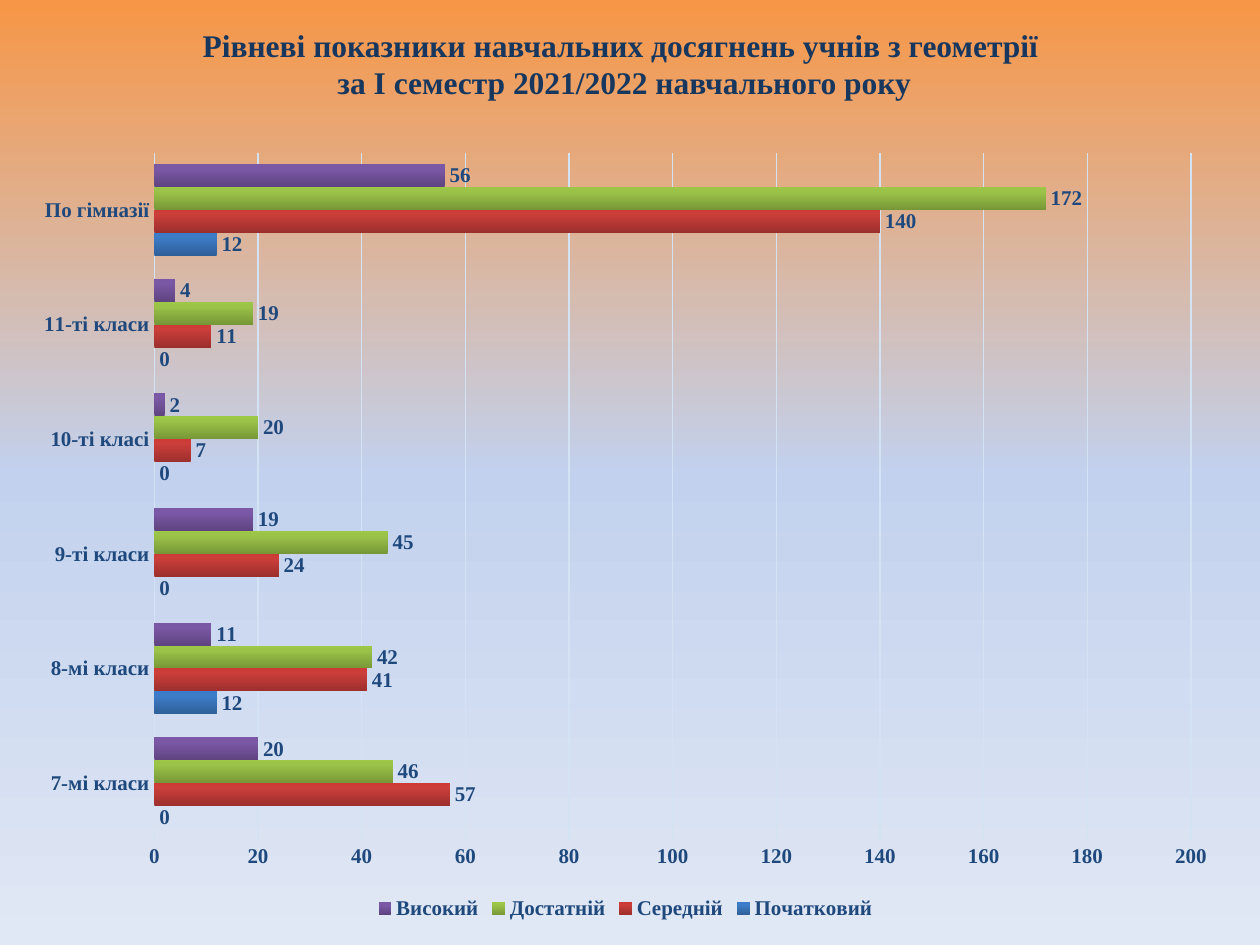
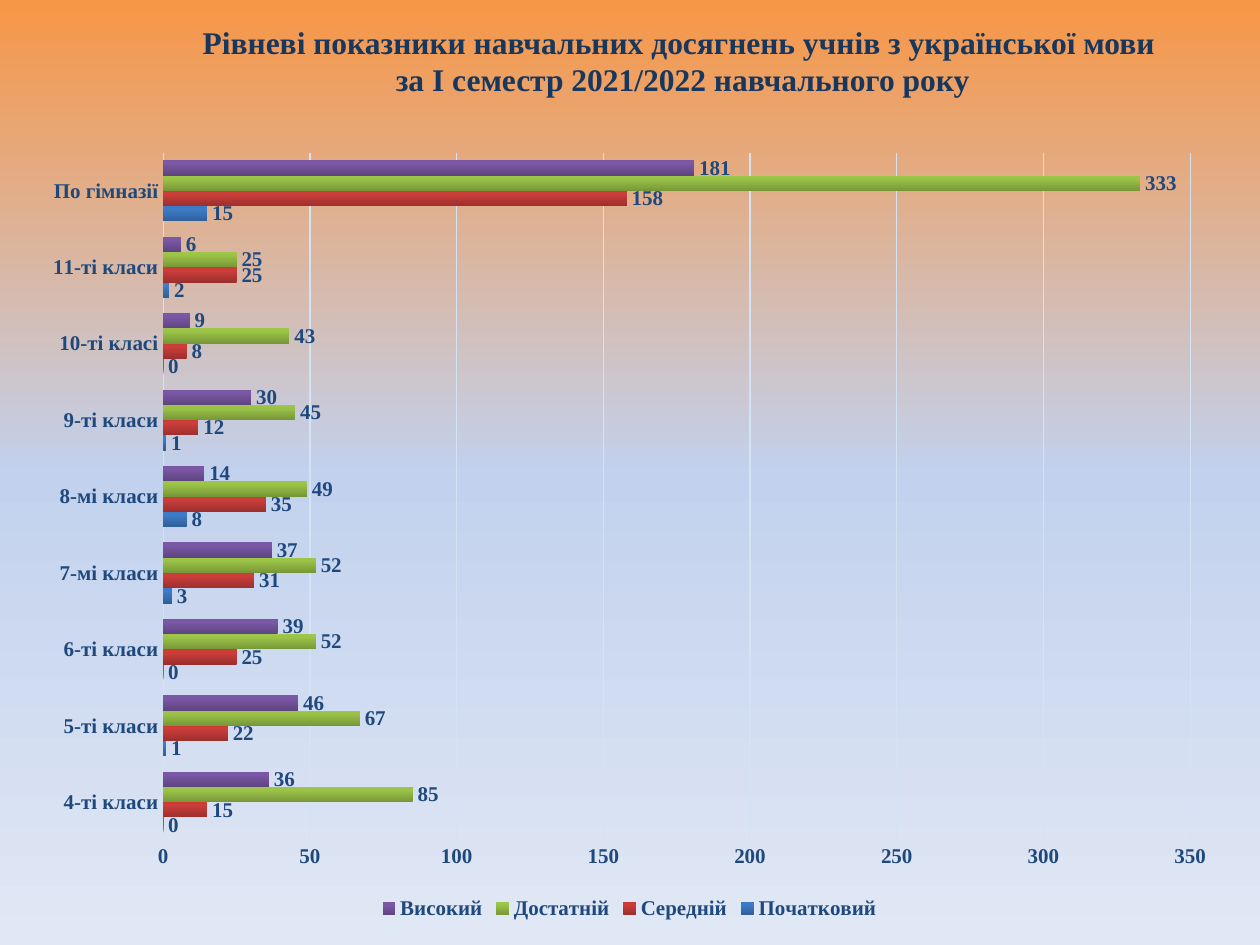
from copy import deepcopy
from dataclasses import dataclass

from pptx import Presentation
from pptx.chart.data import CategoryChartData
from pptx.dml.color import RGBColor
from pptx.dml.fill import FillFormat
from pptx.enum.chart import XL_CHART_TYPE, XL_LABEL_POSITION, XL_LEGEND_POSITION, XL_TICK_MARK
from pptx.enum.text import MSO_ANCHOR, MSO_AUTO_SIZE, PP_ALIGN
from pptx.oxml.ns import qn
from pptx.util import Emu, Pt

BARS = XL_CHART_TYPE.BAR_CLUSTERED
OUTSIDE = XL_LABEL_POSITION.OUTSIDE_END
BOTTOM = XL_LEGEND_POSITION.BOTTOM
NO_TICK = XL_TICK_MARK.NONE
MIDDLE = MSO_ANCHOR.MIDDLE
NO_AUTOFIT = MSO_AUTO_SIZE.NONE
CENTER = PP_ALIGN.CENTER

EMU_PER_PX = 914400 / 126
SLIDE_WIDTH, SLIDE_HEIGHT = 1260, 945
TITLE_ONLY = 5

# Shared colours and font
TITLE_COLOR = RGBColor(0x17, 0x37, 0x5E)
CHART_TEXT = RGBColor(0x1F, 0x49, 0x7D)
GRID = RGBColor(0xD4, 0xE3, 0xF4)
SKY = (
    (0.0, RGBColor(0xF7, 0x96, 0x46)),
    (0.5, RGBColor(0xC2, 0xD1, 0xED)),
    (1.0, RGBColor(0xE1, 0xE8, 0xF5)),
)
FONT = "Times New Roman"


@dataclass(frozen=True)
class Level:
    name: str
    dark: RGBColor
    middle: RGBColor
    light: RGBColor


@dataclass(frozen=True)
class Box:
    left: int
    top: int
    width: int
    height: int

    def emu(self) -> tuple[Emu, ...]:
        return tuple(px(n) for n in (self.left, self.top, self.width, self.height))


@dataclass(frozen=True)
class Subject:
    title: str
    title_box: Box
    chart_box: Box
    axis_max: int
    axis_step: int
    results: dict[str, tuple[int, ...]]  # pupils per level, in the order of LEVELS


LEVELS = (
    Level("Початковий", RGBColor(0x2F, 0x5F, 0x99), RGBColor(0x3D, 0x7C, 0xC7), RGBColor(0x3A, 0x7C, 0xCB)),
    Level("Середній", RGBColor(0x9C, 0x2F, 0x2D), RGBColor(0xCB, 0x3E, 0x3A), RGBColor(0xCE, 0x3B, 0x37)),
    Level("Достатній", RGBColor(0x77, 0x97, 0x37), RGBColor(0x9B, 0xC3, 0x48), RGBColor(0x9D, 0xC7, 0x46)),
    Level("Високий", RGBColor(0x5F, 0x44, 0x80), RGBColor(0x7B, 0x58, 0xA6), RGBColor(0x7C, 0x57, 0xA8)),
)

SUBJECTS = (
    Subject(
        "Рівневі показники навчальних досягнень учнів з геометрії \v"
        "за І семестр 2021/2022 навчального року",
        Box(29, 29, 1191, 69), Box(20, 137, 1211, 788), 200, 20,
        {
            "7-мі класи": (0, 57, 46, 20),
            "8-мі класи": (12, 41, 42, 11),
            "9-ті класи": (0, 24, 45, 19),
            "10-ті класі": (0, 7, 20, 2),
            "11-ті класи": (0, 11, 19, 4),
            "По гімназії": (12, 140, 172, 56),
        },
    ),
    Subject(
        "Рівневі показники навчальних досягнень учнів з української мови\v"
        " за І семестр 2021/2022 навчального року",
        Box(98, 26, 1162, 69), Box(29, 137, 1201, 788), 350, 50,
        {
            "4-ті класи": (0, 15, 85, 36),
            "5-ті класи": (1, 22, 67, 46),
            "6-ті класи": (0, 25, 52, 39),
            "7-мі класи": (3, 31, 52, 37),
            "8-мі класи": (8, 35, 49, 14),
            "9-ті класи": (1, 12, 45, 30),
            "10-ті класі": (0, 8, 43, 9),
            "11-ті класи": (2, 25, 25, 6),
            "По гімназії": (15, 158, 333, 181),
        },
    ),
)


def px(n: int) -> Emu:
    return Emu(round(n * EMU_PER_PX))


def set_font(font, size: int, color: RGBColor) -> None:
    font.name, font.size, font.bold = FONT, Pt(size), True
    font.color.rgb = color


def set_gradient(fill: FillFormat, owner, stops, angle: int) -> None:
    """Give the fill held by the XML element owner three stops."""
    fill.gradient()
    fill.gradient_angle = angle
    stop_list = owner.find(".//" + qn("a:gsLst"))
    stop_list.insert(1, deepcopy(stop_list[0]))
    for stop, (position, color) in zip(fill.gradient_stops, stops):
        stop.position = position
        stop.color.rgb = color


def add_title(slide, subject: Subject) -> None:
    title = slide.shapes.title
    title.left, title.top, title.width, title.height = subject.title_box.emu()
    frame = title.text_frame
    frame.auto_size, frame.vertical_anchor = NO_AUTOFIT, MIDDLE
    paragraph = frame.paragraphs[0]
    paragraph.text = subject.title
    paragraph.alignment = CENTER
    for run in paragraph.runs:
        set_font(run.font, 18, TITLE_COLOR)
    # The line break takes the size of the text around it
    line_break = title.element.find(".//" + qn("a:br"))
    line_break.insert(0, deepcopy(title.element.find(".//" + qn("a:rPr"))))


def style_axes(chart, subject: Subject) -> None:
    grades, pupils = chart.category_axis, chart.value_axis
    for axis in (grades, pupils):
        axis.major_tick_mark = axis.minor_tick_mark = NO_TICK
        set_font(axis.tick_labels.font, 12, CHART_TEXT)
    pupils.minimum_scale, pupils.maximum_scale = 0, subject.axis_max
    pupils.major_unit = subject.axis_step
    pupils.has_major_gridlines = True
    for line in (grades.format.line, pupils.major_gridlines.format.line):
        line.color.rgb, line.width = GRID, Pt(0.75)
    pupils.format.line.fill.background()


def add_results_chart(slide, subject: Subject) -> None:
    data = CategoryChartData()
    data.categories = list(subject.results)
    for level, counts in zip(LEVELS, zip(*subject.results.values())):
        data.add_series(level.name, counts)
    chart = slide.shapes.add_chart(BARS, *subject.chart_box.emu(), data).chart
    chart.has_title = False
    chart.font.name, chart.font.size = "Calibri", Pt(10)
    style_axes(chart, subject)

    # Bars and their values
    plot = chart.plots[0]
    plot.gap_width, plot.vary_by_categories = 100, False
    for series, level in zip(plot.series, LEVELS):
        series.invert_if_negative = False
        stops = ((0.0, level.dark), (0.8, level.middle), (1.0, level.light))
        set_gradient(series.format.fill, series._element, stops, 90)
        labels = series.data_labels
        labels.show_value, labels.position = True, OUTSIDE
        set_font(labels.font, 12, CHART_TEXT)

    # Legend
    chart.has_legend = True
    chart.legend.position, chart.legend.include_in_layout = BOTTOM, False
    set_font(chart.legend.font, 12, CHART_TEXT)


def main() -> None:
    deck = Presentation()
    deck.slide_width, deck.slide_height = px(SLIDE_WIDTH), px(SLIDE_HEIGHT)
    for subject in SUBJECTS:
        slide = deck.slides.add_slide(deck.slide_layouts[TITLE_ONLY])
        set_gradient(slide.background.fill, slide.element, SKY, 270)
        add_title(slide, subject)
        add_results_chart(slide, subject)
    deck.save("out.pptx")


if __name__ == "__main__":
    main()
